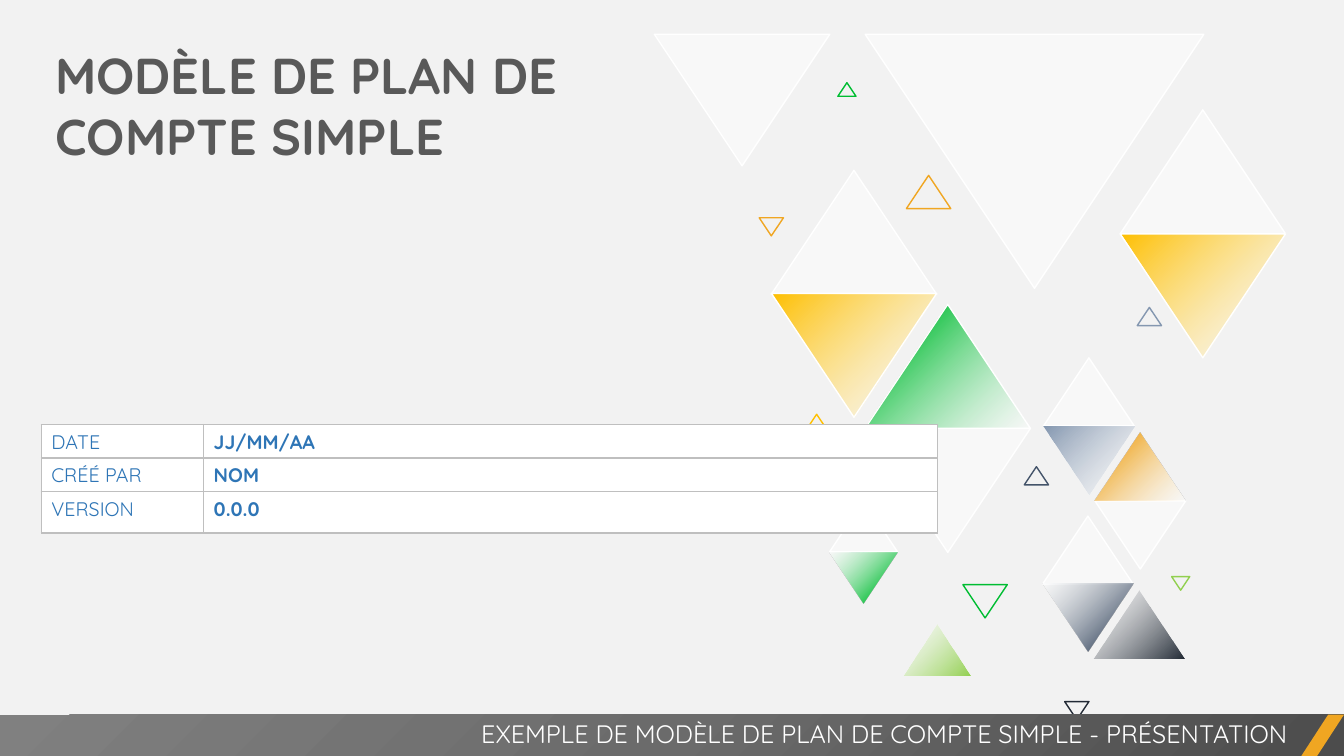
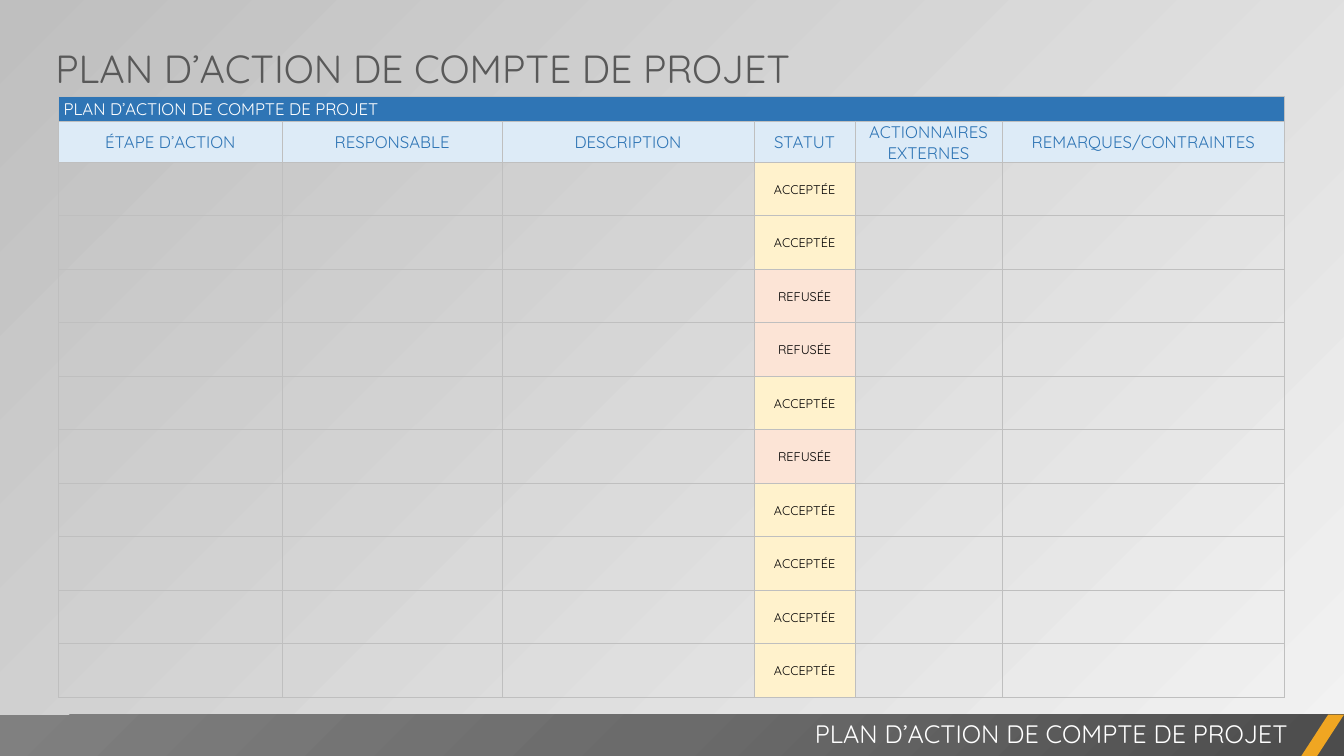
from lxml.etree import SubElement
from pptx import Presentation
from pptx.dml.color import RGBColor
from pptx.enum.shapes import MSO_SHAPE as Shape
from pptx.enum.text import MSO_ANCHOR as Anchor, MSO_AUTO_SIZE as AutoSize, PP_ALIGN as Align
from pptx.oxml.ns import qn
from pptx.util import Inches, Pt

WIDTH, HEIGHT = 13.33, 7.5
FONT = "Quicksand"
COLOURS = {
    "white": "FFFFFF", "paper": "F2F2F2", "silver": "BFBFBF", "title": "595959", "black": "000000",
    "yellow": "FFC000", "green": "00BD32", "lime": "92D050", "orange": "F0A622",
    "mist": "8497B0", "slate": "44546A", "night": "222A35",
    "blue": "2E75B6", "header": "2F75B5", "pale blue": "DDEBF7",
    "cream": "FFF2CC", "peach": "FCE4D6",
    "bar dark": "4C4C4C", "bar middle": "6B6B6B", "bar light": "808080",
}

# Content
COVER_TITLE = "MODÈLE DE PLAN DE COMPTE SIMPLE"
COVER_FOOTER = "EXEMPLE DE MODÈLE DE PLAN DE COMPTE SIMPLE - PRÉSENTATION"
DETAILS = [("DATE", "JJ/MM/AA"), ("CRÉÉ PAR", "NOM"), ("VERSION", "0.0.0")]
PLAN_TITLE = "PLAN D’ACTION DE COMPTE DE PROJET"
PLAN_COLUMNS = {
    "ÉTAPE D’ACTION": 2.22, "RESPONSABLE": 2.18, "DESCRIPTION": 2.5,
    "STATUT": 1, "ACTIONNAIRES EXTERNES": 1.46, "REMARQUES/CONTRAINTES": 2.8,
}
STATUS_FILLS = {"ACCEPTÉE": "cream", "REFUSÉE": "peach"}
STATUSES = ["ACCEPTÉE", "ACCEPTÉE", "REFUSÉE", "REFUSÉE", "ACCEPTÉE",
            "REFUSÉE", "ACCEPTÉE", "ACCEPTÉE", "ACCEPTÉE", "ACCEPTÉE"]

# Triangles: left, top, width, points down
GLASS = [
    (7.65, 1.69, 1.64, False), (8.58, 4.25, 1.64, True), (8.58, 0.34, 3.36, True),
    (10.34, 5.12, 0.9, False), (10.35, 3.55, 0.9, False), (10.86, 4.97, 0.9, True),
    (8.23, 4.97, 0.67, False), (11.11, 1.09, 1.64, False), (6.49, 0.34, 1.74, True),
]
# ... colour, colour comes first in the gradient, white edge
SHADED = [
    (7.65, 2.91, 1.64, True, "yellow", True, True),
    (8.58, 3.02, 1.64, False, "green", False, True),
    (10.85, 5.86, 0.9, False, "night", True, False),
    (10.34, 5.79, 0.9, True, "slate", False, False),
    (10.35, 4.23, 0.9, True, "mist", True, False),
    (10.86, 4.29, 0.9, False, "orange", False, False),
    (8.96, 6.2, 0.67, False, "lime", True, False),
    (8.23, 5.48, 0.67, True, "green", False, False),
    (11.11, 2.32, 1.64, True, "yellow", True, True),
]
# ... line colour
OUTLINED = [
    (9.55, 5.8, 0.44, True, "green"), (7.88, 4.11, 0.44, False, "yellow"),
    (10.16, 4.63, 0.24, False, "slate"), (10.56, 6.96, 0.24, True, "night"),
    (7.53, 2.16, 0.24, True, "orange"), (11.28, 3.05, 0.24, False, "mist"),
    (8.31, 0.82, 0.18, False, "green"), (11.62, 5.72, 0.18, True, "lime"),
    (8.99, 1.74, 0.44, False, "orange"),
]


# Colour helpers
def rgb(name):
    return RGBColor.from_string(COLOURS[name])


def add_colour(parent, name, opacity=100):
    colour = SubElement(parent, qn("a:srgbClr"), val=COLOURS[name])
    if opacity < 100:
        SubElement(colour, qn("a:alpha"), val=str(opacity * 1000))


def set_solid(fill, name):
    fill.solid()
    fill.fore_color.rgb = rgb(name)


def set_gradient(fill, owner, stops, angle=None):
    """Fill with (position, colour, opacity) stops; without an angle, spread from bottom right."""
    fill.gradient()
    gradient = owner.xpath(".//a:gradFill")[0]
    for child in list(gradient):
        gradient.remove(child)
    gradient.set("rotWithShape", "1")
    stop_list = SubElement(gradient, qn("a:gsLst"))
    for position, name, opacity in stops:
        add_colour(SubElement(stop_list, qn("a:gs"), pos=str(position * 1000)), name, opacity)
    if angle is None:
        spread = SubElement(gradient, qn("a:path"), path="circle")
        SubElement(spread, qn("a:fillToRect"), l="100000", t="100000")
    else:
        SubElement(gradient, qn("a:lin"), ang=str(angle * 60000), scaled="0")


# Text and shape helpers
def write(frame, text, size, colour, bold=False, align=Align.LEFT):
    paragraph = frame.paragraphs[0]
    paragraph.alignment = align
    run = paragraph.add_run()
    run.text = text
    for key, value in {"name": FONT, "size": Pt(size), "bold": bold}.items():
        setattr(run.font, key, value)
    run.font.color.rgb = rgb(colour)


def add_text(slide, box, *text, **style):
    frame = slide.shapes.add_textbox(*map(Inches, box)).text_frame
    frame.word_wrap = True
    frame.auto_size = AutoSize.SHAPE_TO_FIT_TEXT
    write(frame, *text, **style)


def add_plain(shapes, kind, box, line=None):
    shape = shapes.add_shape(kind, *map(Inches, box))
    shape.shadow.inherit = False
    shape.fill.background()
    if line:
        shape.line.color.rgb = rgb(line)
        shape.line.width = Pt(1)
    else:
        shape.line.fill.background()
    return shape


def add_footer(slide, text, text_left):
    top, height = 7.09, 0.42
    band = add_plain(slide.shapes, Shape.RECTANGLE, (0, top, WIDTH, height))
    stops = [(0, "bar dark", 100), (50, "bar middle", 100), (100, "bar light", 100)]
    set_gradient(band.fill, band._element.spPr, stops)
    slash = add_plain(slide.shapes, Shape.PARALLELOGRAM, (WIDTH - 0.43, top, 0.43, height))
    slash.adjustments[0] = 0.65
    set_solid(slash.fill, "orange")
    add_text(slide, (text_left, 7.08, 12.87 - text_left, 0.4), text, 18, "white", align=Align.RIGHT)


def add_triangles(slide):
    group = slide.shapes.add_group_shape()

    def triangle(left, top, width, down, line):
        shape = add_plain(group.shapes, Shape.ISOSCELES_TRIANGLE, (left, top, width, width * 0.75), line)
        shape.rotation = 180 if down else 0
        return shape

    for place in GLASS:
        shape = triangle(*place, "white")
        set_solid(shape.fill, "white")
        colour = shape._element.spPr.xpath("./a:solidFill/a:srgbClr")[0]
        SubElement(colour, qn("a:alpha"), val="50000")
    for *place, colour, colour_first, edged in SHADED:
        shape = triangle(*place, "white" if edged else None)
        stops = [(0, colour, 100), (100, "white", 50)] if colour_first else [
            (0, "white", 50), (82, colour, 100)]
        set_gradient(shape.fill, shape._element.spPr, stops, 225)
    for place in OUTLINED:
        triangle(*place)


# Table helpers
def add_grid(slide, left, top, columns, rows):
    box = (left, top, sum(columns), sum(rows))
    table = slide.shapes.add_table(len(rows), len(columns), *map(Inches, box)).table
    table.first_row = table.horz_banding = False
    for column, width in zip(table.columns, columns):
        column.width = Inches(width)
    for row, height in zip(table.rows, rows):
        row.height = Inches(height)
    return table


def style_cell(cell, border, fill=None):
    properties = cell._tc.get_or_add_tcPr()
    for side in ("a:lnL", "a:lnR", "a:lnT", "a:lnB"):
        line = SubElement(properties, qn(side), w=str(Pt(border)))
        add_colour(SubElement(line, qn("a:solidFill")), "silver")
    if fill:
        set_solid(cell.fill, fill)
    else:
        cell.fill.background()


def tighten(cell, left=0.01):
    margins = {"margin_left": left, "margin_top": 0.01, "margin_right": 0.01, "margin_bottom": 0}
    for key, value in margins.items():
        setattr(cell, key, Inches(value))
    cell.vertical_anchor = Anchor.MIDDLE


# Slides
def build_cover(slide):
    set_solid(slide.background.fill, "paper")
    add_triangles(slide)
    add_text(slide, (0.45, 0.39, 5.69, 1.31), COVER_TITLE, 36, "title", bold=True)
    table = add_grid(slide, 0.41, 4.21, [1.61, 7.28], [0.33, 0.33, 0.41])
    for row, texts in enumerate(DETAILS):
        for column, text in enumerate(texts):
            cell = table.cell(row, column)
            style_cell(cell, 1, "white")
            write(cell.text_frame, text, 14, "blue", bold=column == 1)
    add_footer(slide, COVER_FOOTER, 4.17)


def build_plan(slide):
    set_gradient(slide.background.fill, slide._element,
                 [(0, "paper", 40), (100, "silver", 100)], 225)
    add_footer(slide, PLAN_TITLE, 5.25)
    add_text(slide, (0.45, 0.39, 7.85, 0.57), PLAN_TITLE, 28, "title")

    top, bottom, heads = 0.96, 6.92, [0.24, 0.41]
    step = (bottom - top - sum(heads)) / len(STATUSES)
    names = list(PLAN_COLUMNS)
    table = add_grid(slide, 0.58, top, list(PLAN_COLUMNS.values()), heads + [step] * len(STATUSES))
    row_fills = ["header", "pale blue"] + [None] * len(STATUSES)
    for row, fill in enumerate(row_fills):
        for column, name in enumerate(names):
            status = STATUSES[row - 2] if row > 1 and name == "STATUT" else None
            cell = table.cell(row, column)
            style_cell(cell, 0.5, STATUS_FILLS.get(status, fill))
            tighten(cell)
            if row == 1:
                write(cell.text_frame, name, 12, "header", align=Align.CENTER)
            elif status:
                write(cell.text_frame, status, 9, "black", align=Align.CENTER)
    banner = table.cell(0, 0)
    banner.merge(table.cell(0, len(names) - 1))
    tighten(banner, 0.05)
    write(banner.text_frame, PLAN_TITLE, 12, "white")


def main():
    presentation = Presentation()
    presentation.slide_width, presentation.slide_height = Inches(WIDTH), Inches(HEIGHT)
    for build in (build_cover, build_plan):
        build(presentation.slides.add_slide(presentation.slide_layouts[6]))
    presentation.save("out.pptx")


if __name__ == "__main__":
    main()
